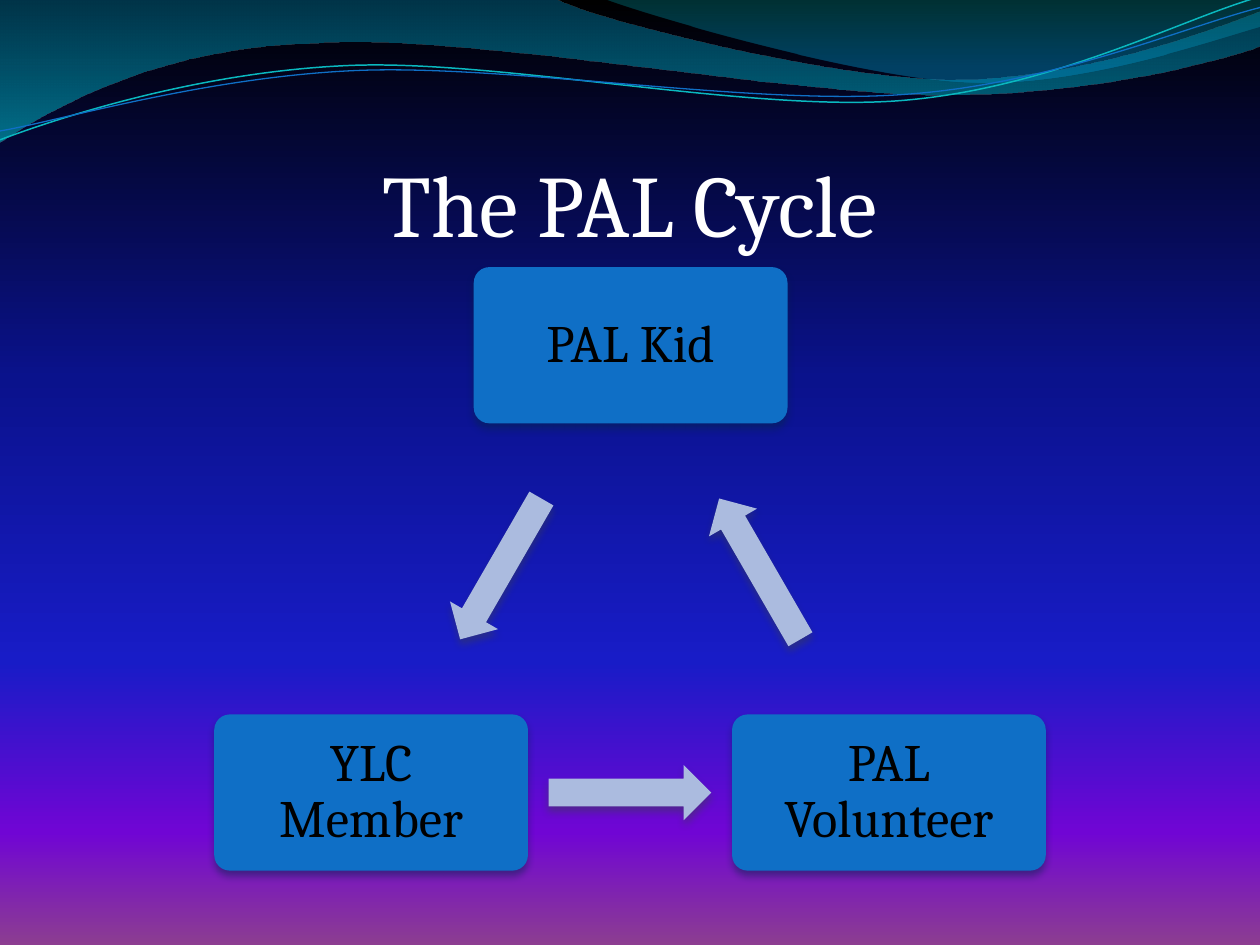
"""Build the PAL Cycle slide: three linked roles under a wave banner."""
from math import atan2, cos, degrees, radians, sin

from lxml.etree import SubElement
from pptx import Presentation
from pptx.dml.color import RGBColor
from pptx.enum.shapes import MSO_SHAPE
from pptx.enum.text import MSO_ANCHOR, PP_ALIGN
from pptx.oxml.ns import qn
from pptx.util import Inches, Pt

FONT = "Cambria"
WHITE = RGBColor(0xFF, 0xFF, 0xFF)
BLACK = RGBColor(0x00, 0x00, 0x00)
BLUE = RGBColor(0x0F, 0x6F, 0xC6)
TEAL = RGBColor(0x0A, 0xB8, 0xBF)
ARROW = RGBColor(0xAB, 0xBB, 0xDF)
BOX_SHADOW = RGBColor(0x04, 0x27, 0x47)
ARROW_SHADOW = RGBColor(0x3C, 0x41, 0x4F)

TITLE = "The PAL Cycle"
ROLES = [("PAL Kid", 3.76, 2.12), ("PAL Volunteer", 5.81, 5.67), ("YLC Member", 1.7, 5.67)]
BOX_W, BOX_H = 2.49, 1.24
ARROW_W, ARROW_H = 1.29, 0.44

BACKGROUND = [(0, RGBColor(0x00, 0x00, 0x00), 100), (40, RGBColor(0x0A, 0x12, 0x8C), 100),
              (70, RGBColor(0x18, 0x1C, 0xC7), 100), (88, RGBColor(0x70, 0x05, 0xD4), 100),
              (100, RGBColor(0x8C, 0x3D, 0x91), 100)]
BANDS = [
    ([(0, 0), (4.4, -0.01), (4.76, 0.17, 6.64, 0.63, 7.58, 0.63),
      (8.53, 0.63, 9.58, 0.26, 10, 0.09), (10.01, 0.36),
      (9.83, 0.44, 8.7, 0.76, 7.46, 0.75), (6.22, 0.75, 3.82, 0.28, 2.57, 0.34),
      (1.29, 0.36, 0.46, 0.83, -0.01, 1.13), (0, 0)],
     [(0, RGBColor(0x00, 0x74, 0xA1), 45), (100, RGBColor(0x00, 0xC6, 0xCF), 55)]),
    ([(4.79, -0.01), (5.09, 0.11, 6.82, 0.62, 7.69, 0.65),
      (8.56, 0.69, 9.61, 0.32, 10, 0.21), (10, 0), (4.79, -0.01)],
     [(0, RGBColor(0x00, 0xA1, 0xA9), 30), (80, RGBColor(0x00, 0x8B, 0xBF), 45)]),
]
WAVE_TILT = -2.7
WAVES = [
    ([(0, 1.11), (0.48, 0.93, 1.58, 0.57, 2.77, 0.52), (3.95, 0.47, 5.93, 0.89, 7.13, 0.8),
      (8.33, 0.71, 9.38, 0.15, 9.98, -0.02)], (4.99, 0.57), TEAL, 0.85),
    ([(0, 1.04), (0.47, 0.96, 1.64, 0.61, 2.83, 0.56), (4.03, 0.51, 5.97, 0.84, 7.17, 0.75),
      (8.36, 0.67, 9.41, 0.21, 10, 0.06)], (5, 0.59), BLUE, 0.75),
]


def add_color(parent, color, opacity):
    clr = SubElement(parent, qn("a:srgbClr"), val=str(color))
    if opacity < 100:
        SubElement(clr, qn("a:alpha"), val=str(opacity * 1000))


def set_gradient(fill, props, stops):
    fill.gradient()
    fill.gradient_angle = 270
    gs_list = props.find(qn("a:gradFill")).find(qn("a:gsLst"))
    for gs in list(gs_list):
        gs_list.remove(gs)
    for pos, color, opacity in stops:
        add_color(SubElement(gs_list, qn("a:gs"), pos=str(pos * 1000)), color, opacity)


def pairs(segment):
    return list(zip(segment[::2], segment[1::2]))


def untilt(segments, center, angle):
    cx, cy = center
    c, s = cos(radians(angle)), sin(radians(angle))
    return [[v for x, y in pairs(seg)
             for v in (cx + (x - cx) * c + (y - cy) * s, cy - (x - cx) * s + (y - cy) * c)]
            for seg in segments]


def add_curve(slide, segments, close):
    anchors = [(Inches(seg[-2]), Inches(seg[-1])) for seg in segments]
    builder = slide.shapes.build_freeform(*anchors[0])
    builder.add_line_segments(anchors[1:], close=close)
    sp = builder.convert_to_shape()
    sp.shadow.inherit = False
    outline = sp._element.spPr.find(".//" + qn("a:path"))
    for seg, line in zip(segments[1:], outline.findall(qn("a:lnTo"))):
        if len(seg) == 6:
            curve = SubElement(outline, qn("a:cubicBezTo"))
            for x, y in pairs(seg):
                SubElement(curve, qn("a:pt"), x=str(Inches(x) - sp.left), y=str(Inches(y) - sp.top))
            outline.replace(line, curve)
    return sp


def add_solid(slide, kind, x, y, w, h, color, shadow):
    sp = slide.shapes.add_shape(kind, Inches(x), Inches(y), Inches(w), Inches(h))
    sp.fill.solid()
    sp.fill.fore_color.rgb = color
    sp.line.fill.background()
    sp.shadow.inherit = False
    effects = sp._element.spPr.find(qn("a:effectLst"))
    outer = SubElement(effects, qn("a:outerShdw"), blurRad=str(Pt(4.5)), dist=str(Pt(3)),
                       dir="5400000", rotWithShape="0")
    add_color(outer, shadow, 48)
    return sp


def set_text(sp, text, size, color, anchor, insets):
    tf = sp.text_frame
    tf.word_wrap = True
    tf.vertical_anchor = anchor
    tf.margin_left, tf.margin_top, tf.margin_right, tf.margin_bottom = map(Inches, insets)
    p = tf.paragraphs[0]
    p.text = text
    p.alignment = PP_ALIGN.CENTER
    p.font.name, p.font.size = FONT, Pt(size)
    p.font.color.rgb = color
    return p


def main():
    prs = Presentation()
    prs.slide_width, prs.slide_height = Inches(10), Inches(7.5)
    slide = prs.slides.add_slide(prs.slide_layouts[6])
    fill = slide.background.fill
    set_gradient(fill, slide._element.find(".//" + qn("p:bgPr")), BACKGROUND)

    for segments, stops in BANDS:
        sp = add_curve(slide, segments, True)
        set_gradient(sp.fill, sp._element.spPr, stops)
        sp.line.fill.background()
    for segments, center, color, width in WAVES:
        sp = add_curve(slide, untilt(segments, center, WAVE_TILT), False)
        sp.rotation = WAVE_TILT
        sp.fill.background()
        sp.line.color.rgb = color
        sp.line.width = Pt(width)

    title = slide.shapes.add_textbox(Inches(0.5), Inches(0.77), Inches(9), Inches(1.25))
    set_text(title, TITLE, 50, WHITE, MSO_ANCHOR.BOTTOM, (0, 0.05, 0, 0))

    for (text, x, y), (_, next_x, next_y) in zip(ROLES, ROLES[1:] + ROLES[:1]):
        box = add_solid(slide, MSO_SHAPE.ROUNDED_RECTANGLE, x, y, BOX_W, BOX_H, BLUE, BOX_SHADOW)
        box.adjustments[0] = 0.1
        p = set_text(box, text, 30, BLACK, MSO_ANCHOR.MIDDLE, (0.16,) * 4)
        p.line_spacing = 0.9
        arrow = add_solid(slide, MSO_SHAPE.LEFT_ARROW, (x + next_x + BOX_W - ARROW_W) / 2,
                          (y + next_y + BOX_H - ARROW_H) / 2, ARROW_W, ARROW_H, ARROW, ARROW_SHADOW)
        arrow.rotation = round(degrees(atan2(next_y - y, next_x - x))) % 360

    prs.save("out.pptx")


if __name__ == "__main__":
    main()
